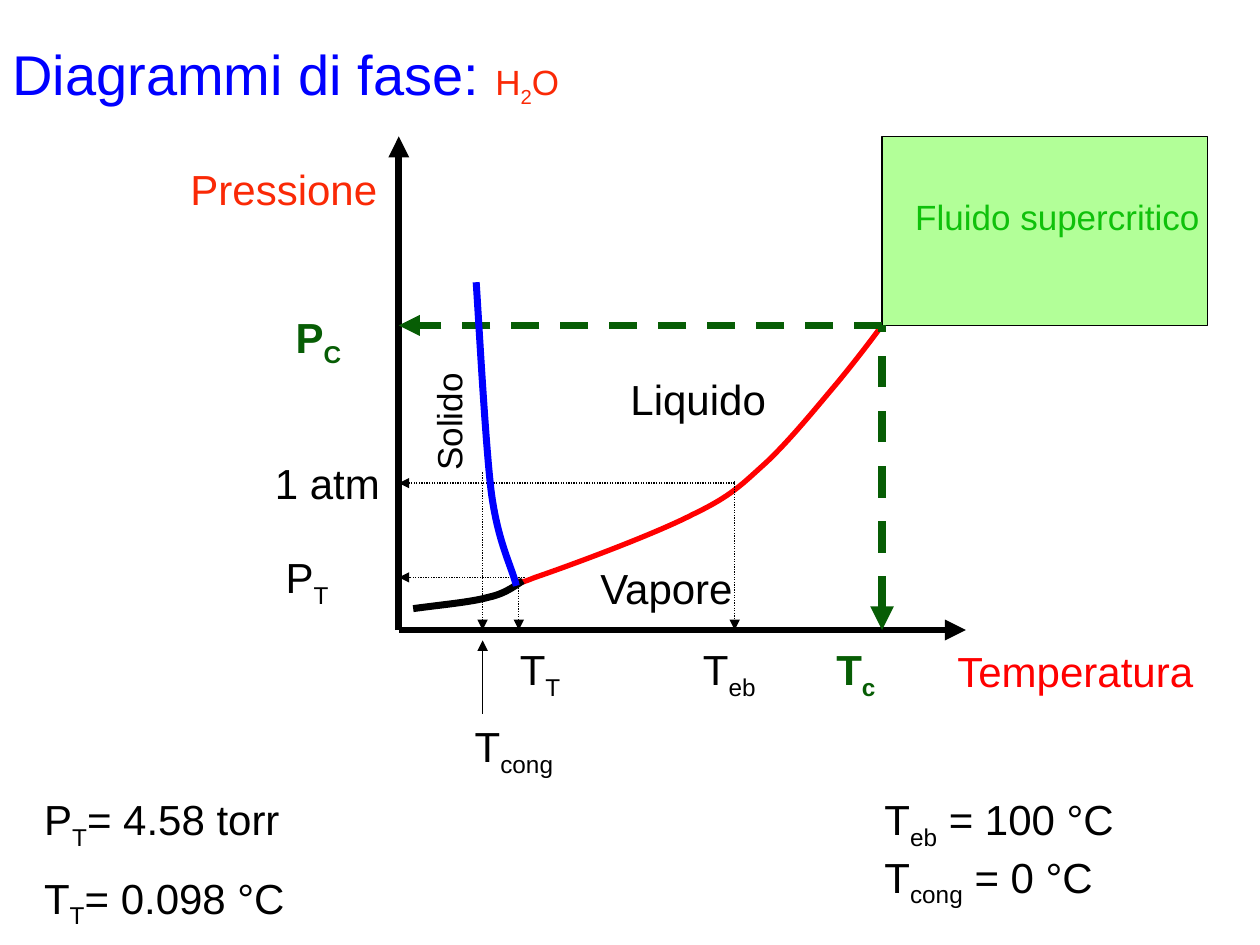
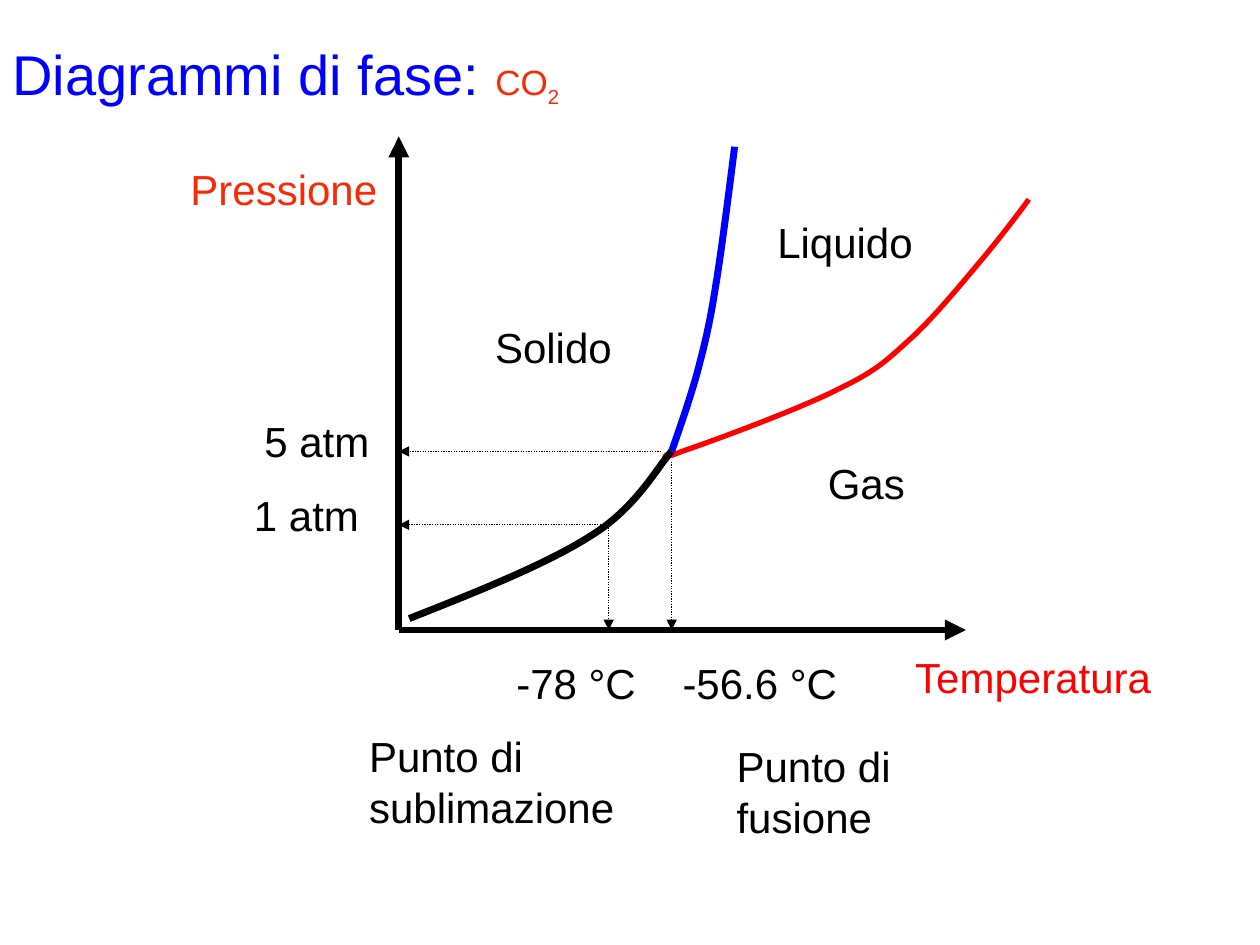
import pptx
import pptx.util
import pptx.dml.color
import pptx.enum.dml
import pptx.enum.shapes
import pptx.enum.text
import pptx.oxml
import pptx.oxml.ns
from dataclasses import dataclass

Cm = pptx.util.Cm
Pt = pptx.util.Pt
DASH = pptx.enum.dml.MSO_LINE.DASH
DOT = pptx.enum.dml.MSO_LINE.ROUND_DOT
CENTER = pptx.enum.text.PP_ALIGN.CENTER
MIDDLE = pptx.enum.text.MSO_ANCHOR.MIDDLE

FONT = "Arial"
BLACK = "000000"
BLUE = "0000FF"
RED = "FF0000"
ORANGE = "FA2906"
GREEN = "075D05"
LIME = "0FC10B"
PALE = "66FF33"

PAGE = (25.4, 19.05)
HEAD = (0, 0, 24.33, 3.18)
CHART = (8.04, 2.75, 11.43, 9.95)

BOIL = [(-7.29, -5.13), (-7.24, -5.13), (-7.57, -5.31), (-6.99, -5.08),
        (-6.4, -4.88), (-4.6, -4.22), (-3.81, -3.81),
        (-3.02, -3.43), (-2.82, -3.2), (-2.34, -2.77),
        (-1.85, -2.31), (-1.3, -1.63), (-0.91, -1.17),
        (-0.53, -0.71), (-0.18, -0.25), (0, 0)]


def paint(code):
    return pptx.dml.color.RGBColor.from_string(code)


def tag(parent, name, **attrs):
    node = pptx.oxml.ns.qn(name)
    child = parent.makeelement(node, attrs)
    parent.append(child)
    return child


def write(para, text, size=24, color=BLACK, bold=False):
    for index, part in enumerate(text.split("_")):
        if not part:
            continue
        run = para.add_run()
        run.text = part
        run.font.name = FONT
        run.font.size = Pt(size)
        run.font.bold = bold
        run.font.color.rgb = paint(color)
        if index % 2:
            run.font._element.set("baseline", "-25000")


def frame(slide, box):
    shape = slide.shapes.add_textbox(*map(Cm, box))
    shape.text_frame.word_wrap = True
    return shape


def label(slide, box, text, align=None, turn=0, **style):
    shape = frame(slide, box)
    shape.rotation = turn
    body = shape.text_frame
    for index, row in enumerate(text.split("\n")):
        para = body.add_paragraph() if index else body.paragraphs[0]
        para.alignment = align
        if index:
            para.space_before = Pt(12)
        write(para, row, **style)


def title(slide, box, name):
    body = frame(slide, box).text_frame
    body.vertical_anchor = MIDDLE
    para = body.paragraphs[0]
    para.line_spacing = 0.8
    write(para, "Diagrammi di fase: ", size=32, color=BLUE)
    write(para, name, size=20, color=ORANGE)


@dataclass
class Plot:
    slide: object
    box: tuple

    def spot(self, x, y):
        left, top, _, high = self.box
        return Cm(left + x), Cm(top + high - y)

    def text(self, x, y, wide, text, high=1.27, **style):
        left, top, _, tall = self.box
        label(self.slide, (left + x, top + tall - y, wide, high), text, **style)

    def line(self, start, stop, color=BLACK, width=0.75, dash=None, tip="a:tailEnd"):
        link = self.slide.shapes.add_connector(
            pptx.enum.shapes.MSO_CONNECTOR.STRAIGHT,
            *self.spot(*start), *self.spot(*stop))
        link.line.color.rgb = paint(color)
        link.line.width = Pt(width)
        if dash:
            link.line.dash_style = dash
        tag(link.line._get_or_add_ln(), tip, type="triangle")
        tag(link._element.spPr, "a:effectLst")

    def curve(self, points, color, width=4):
        spots = [self.spot(*point) for point in points]
        pen = self.slide.shapes.build_freeform(*spots[0])
        pen.add_line_segments(spots[1:], close=False)
        shape = pen.convert_to_shape()
        shape.shadow.inherit = False
        shape.fill.background()
        shape.line.color.rgb = paint(color)
        shape.line.width = Pt(width)
        steps = list(shape._element.iter(pptx.oxml.ns.qn("a:lnTo")))
        track = steps[0].getparent()
        for index in range(0, len(steps), 3):
            bend = tag(track, "a:cubicBezTo")
            for step in steps[index:index + 3]:
                bend.append(step[0])
                track.remove(step)

    def boil(self, x, y):
        self.curve([(x + dx, y + dy) for dx, dy in BOIL], RED, 3)

    def axes(self, x, y):
        _, _, wide, high = self.box
        self.line((0, 0), (0, high), width=4)
        self.line((0, 0), (wide, 0), width=4)
        self.text(-4.45, 9.53, 4.62, "Pressione", color=ORANGE)
        self.text(x, y, 6.35, "Temperatura", color=RED)

    def guide(self, x, y, top, side):
        self.line((x, top), (x, 0), dash=DOT)
        self.line((side, y), (0, y), dash=DOT)

    def zone(self, x, y, wide, high):
        shape = self.slide.shapes.add_shape(
            pptx.enum.shapes.MSO_SHAPE.RECTANGLE,
            *self.spot(x, y + high), Cm(wide), Cm(high))
        shape.shadow.inherit = False
        shape.fill.solid()
        shape.fill.fore_color.rgb = paint(PALE)
        fill = shape._element.spPr.find(pptx.oxml.ns.qn("a:solidFill"))
        tag(fill[0], "a:alpha", val="50000")
        shape.line.color.rgb = paint(BLACK)
        shape.line.width = Pt(0.75)


def water(slide, box):
    plot = Plot(slide, box)
    x, y = 9.74, 6.14
    plot.zone(x, y, 6.56, 3.81)
    plot.text(10.16, 8.89, 8, "Fluido supercritico", high=1.1, size=20, color=LIME)
    plot.boil(x, y)
    plot.axes(11.01, -0.18)
    plot.line((x, 0), (x, y), GREEN, 4.5, DASH, "a:headEnd")
    plot.curve([(0.29, 0.43), (0.87, 0.51), (1.46, 0.56), (1.81, 0.66),
                (2.19, 0.74), (2.4, 0.94), (2.5, 0.99)], BLACK)
    plot.line((x, y), (0, y), GREEN, 4, DASH)
    plot.guide(6.77, 2.96, 3, 6.77)
    plot.guide(2.42, 1.06, 0.85, 2.54)
    plot.line((1.69, 3.18), (1.69, 0), dash=DOT)
    plot.line((1.69, -1.69), (1.69, -0.21))
    plot.curve([(1.56, 7.01), (1.61, 6.3), (1.74, 3.84), (1.86, 2.82),
                (1.99, 1.78), (2.27, 1.3), (2.37, 0.89)], BLUE)
    plot.text(3.81, 5.29, 4.45, "Liquido", align=CENTER)
    plot.text(3.17, 1.48, 4.45, "Vapore", align=CENTER)
    plot.text(-1.86, 6.37, 5.72, "Solido", high=1.1, turn=270, size=20)
    plot.text(-2.33, 6.55, 2.1, "P_C_", color=GREEN, bold=True)
    plot.text(-2.75, 3.6, 2.97, "1 atm")
    plot.text(-2.53, 1.7, 2.1, "P_T_")
    plot.text(2.19, -0.15, 2.1, "T_T_")
    plot.text(5.88, -0.15, 2.1, "T_eb_")
    plot.text(8.57, -0.15, 2.1, "T_c_", color=GREEN, bold=True)
    plot.text(1.28, -1.7, 2.26, "T_cong_")


def notes(slide, box):
    left, top, wide, high = box
    label(slide, (left, top, 5.92, high), "P_T_= 4.58 torr\nT_T_= 0.098 °C")
    span = 6.15
    label(slide, (left + wide - span, top, span, high),
          "T_eb_ = 100 °C T_cong_ = 0 °C")


def carbon(slide, box):
    plot = Plot(slide, box)
    plot.boil(12.7, 8.68)
    plot.axes(10.16, -0.3)
    plot.curve([(5.5, 3.6), (5.67, 4.09), (5.85, 4.6), (6, 5.13),
                (6.15, 5.69), (6.26, 6.12), (6.38, 6.88),
                (6.51, 7.65), (6.71, 9.27), (6.77, 9.74)], BLUE)
    plot.curve([(0.21, 0.23), (1.63, 0.79), (3.03, 1.35), (3.92, 1.93),
                (4.81, 2.49), (5.24, 3.33), (5.5, 3.6)], BLACK)
    plot.guide(4.23, 2.12, 2.12, 4.23)
    plot.guide(5.5, 3.6, 3.39, 5.29)
    plot.text(6.77, 8.46, 4.45, "Liquido", align=CENTER)
    plot.text(1.69, 6.35, 5.72, "Solido")
    plot.text(7.2, 3.6, 4.45, "Gas", align=CENTER)
    plot.text(-2.96, 4.45, 2.97, "5 atm")
    plot.text(-3.17, 2.96, 2.97, "1 atm")
    plot.text(2.12, -0.43, 3.3, "-78 °C")
    plot.text(5.47, -0.43, 4.2, "-56.6 °C")
    plot.text(-0.85, -1.91, 5.5, "Punto di sublimazione", high=2.29)
    plot.text(6.56, -2.11, 5.5, "Punto di fusione", high=2.29)


def main():
    deck = pptx.Presentation()
    deck.slide_width, deck.slide_height = map(Cm, PAGE)
    blank = deck.slide_layouts[6]
    for name, draw in (("H_2_O", water), ("CO_2_", carbon)):
        slide = deck.slides.add_slide(blank)
        title(slide, HEAD, name)
        draw(slide, CHART)
        if draw is water:
            notes(slide, (0.64, 15.88, 23.09, 2.8))
    deck.save("out.pptx")


if __name__ == "__main__":
    main()
